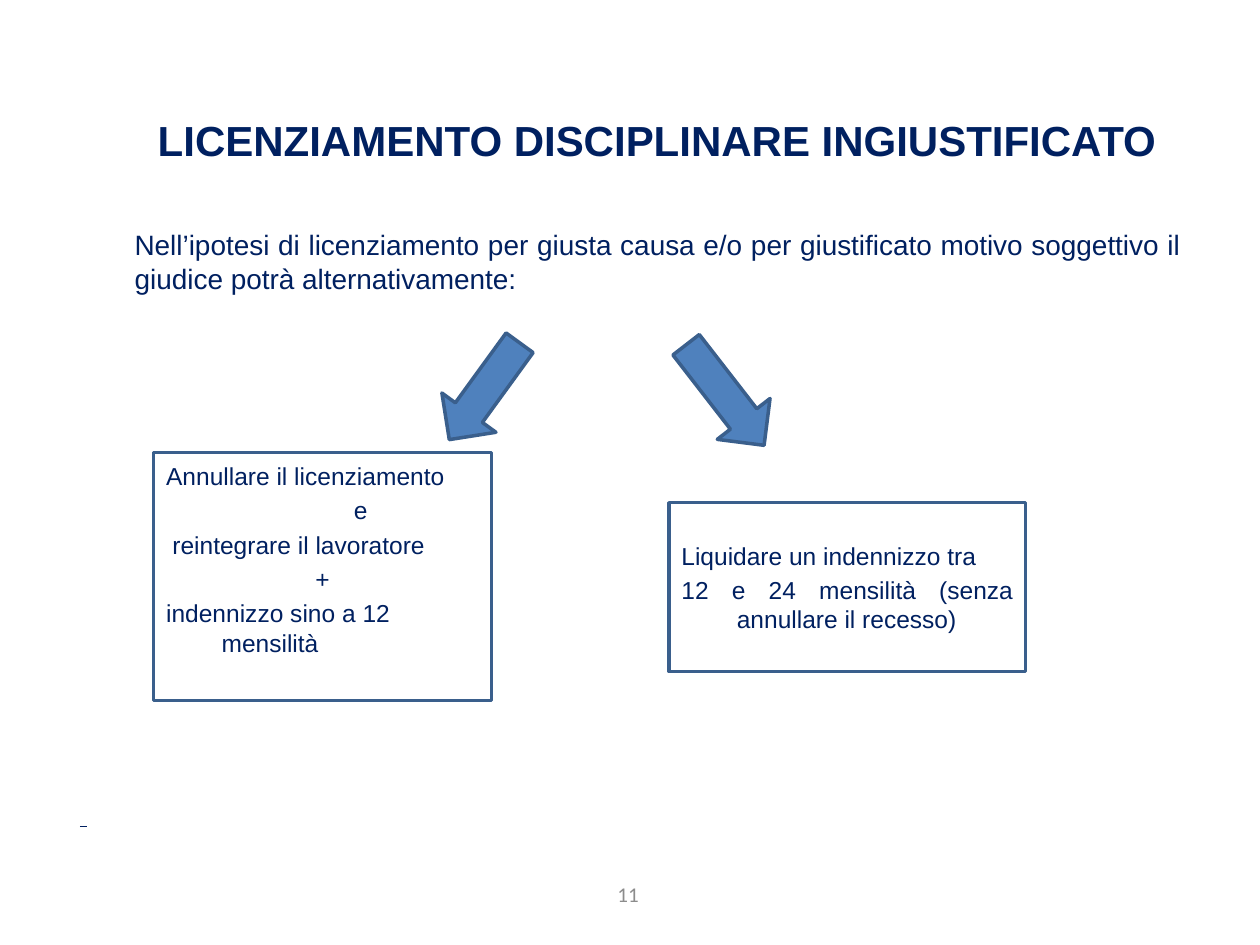
"""Build the slide on unjustified disciplinary dismissal and its two outcomes."""
from dataclasses import dataclass

import pptx
import pptx.dml.color
import pptx.enum.shapes
import pptx.enum.text
import pptx.util
from lxml import etree

COLORS = {"navy": "002060", "blue": "4F81BD", "edge": "3A5F8C", "white": "FFFFFF", "grey": "8C8C8C"}
COLUMNS, ROWS = 100, 75
HANGING = 0.44
SHAPES = pptx.enum.shapes.MSO_SHAPE
ALIGN = pptx.enum.text.PP_ALIGN
ANCHOR = pptx.enum.text.MSO_ANCHOR

deck = pptx.Presentation()
deck.slide_width = pptx.util.Inches(10)
deck.slide_height = pptx.util.Inches(7.5)


@dataclass
class Area:
    column: float
    row: float
    columns: float
    rows: float

    def lengths(self) -> list[int]:
        across, down = deck.slide_width / COLUMNS, deck.slide_height / ROWS
        return [round(self.column * across), round(self.row * down),
                round(self.columns * across), round(self.rows * down)]


@dataclass
class Line:
    text: str
    align: ALIGN = ALIGN.LEFT
    margin: float = 0
    indent: float = 0


@dataclass
class Style:
    size: float
    color: str = "navy"
    name: str = "Arial"
    bold: bool = False
    before: float = 0


@dataclass
class Arrow:
    area: Area
    rotation: float


@dataclass
class Outcome:
    area: Area
    lines: list[Line]
    anchor: ANCHOR
    margin_top: float


def rgb(name: str) -> pptx.dml.color.RGBColor:
    return pptx.dml.color.RGBColor.from_string(COLORS[name])


def write(frame, lines: list[Line], style: Style, **formats) -> None:
    for key, value in {"word_wrap": True, "vertical_anchor": ANCHOR.TOP, **formats}.items():
        setattr(frame, key, value)
    for number, line in enumerate(lines):
        para = frame.add_paragraph() if number else frame.paragraphs[0]
        para.alignment = line.align
        para.space_before = pptx.util.Pt(style.before)
        properties = para._p.get_or_add_pPr()
        properties.set("marL", str(pptx.util.Inches(line.margin)))
        properties.set("indent", str(pptx.util.Inches(line.indent)))
        span = para.add_run()
        span.text = line.text
        fonts = {"name": style.name, "size": pptx.util.Pt(style.size), "bold": style.bold}
        for key, value in fonts.items():
            setattr(span.font, key, value)
        span.font.color.rgb = rgb(style.color)


def add_block(page, kind: SHAPES, area: Area, fill: str):
    block = page.shapes.add_shape(kind, *area.lengths())
    block.shadow.inherit = False
    block.fill.solid()
    block.fill.fore_color.rgb = rgb(fill)
    block.line.color.rgb = rgb("edge")
    block.line.width = pptx.util.Pt(2)
    return block


def add_text(page, area: Area, line: Line, style: Style, anchor: ANCHOR = ANCHOR.TOP) -> None:
    box = page.shapes.add_textbox(*area.lengths())
    write(box.text_frame, [line], style, vertical_anchor=anchor)


def add_dash(page, column: float, row: float, columns: float) -> None:
    left, top, width, _ = Area(column, row, columns, 0).lengths()
    dash = page.shapes.add_connector(pptx.enum.shapes.MSO_CONNECTOR.STRAIGHT, left, top, left + width, top)
    dash.line.color.rgb = rgb("navy")
    dash.line.width = pptx.util.Pt(0.75)
    etree.SubElement(dash._element.spPr, pptx.oxml.ns.qn("a:effectLst"))


ARROWS = [Arrow(Area(35.8, 26.3, 5.3, 9.5), 36), Arrow(Area(54.9, 26.3, 5.3, 10.1), 322.2)]
OUTCOMES = [
    Outcome(Area(12.2, 35.9, 26.8, 19.7), [
        Line("Annullare il licenziamento"),
        Line("e", margin=1.49),
        Line("reintegrare il lavoratore", margin=0.05),
        Line("+", ALIGN.CENTER),
        Line("indennizzo sino a 12 mensilità", margin=HANGING, indent=-HANGING),
    ], ANCHOR.TOP, 0.07),
    Outcome(Area(53.1, 39.9, 28.3, 13.4), [
        Line("Liquidare un indennizzo tra", ALIGN.JUSTIFY),
        Line("12 e 24 mensilità (senza annullare il recesso)", ALIGN.JUSTIFY, HANGING, -HANGING),
    ], ANCHOR.MIDDLE, 0.05),
]


def main() -> None:
    page = deck.slides.add_slide(deck.slide_layouts[5])
    title = page.shapes.title
    title.left, title.top, title.width, title.height = Area(8.3, 8.2, 87.7, 5.8).lengths()
    write(title.text_frame, [Line("LICENZIAMENTO DISCIPLINARE INGIUSTIFICATO", ALIGN.CENTER)],
          Style(24, bold=True), vertical_anchor=ANCHOR.MIDDLE)
    add_text(page, Area(9.7, 17.6, 85, 6.5), Line(
        "Nell’ipotesi di licenziamento per giusta causa e/o per giustificato motivo "
        "soggettivo il giudice potrà alternativamente:", ALIGN.JUSTIFY), Style(16))
    for arrow in ARROWS:
        add_block(page, SHAPES.DOWN_ARROW, arrow.area, "blue").rotation = arrow.rotation
    for outcome in OUTCOMES:
        block = add_block(page, SHAPES.RECTANGLE, outcome.area, "white")
        write(block.text_frame, outcome.lines, Style(14, before=2.8),
              vertical_anchor=outcome.anchor, margin_top=pptx.util.Inches(outcome.margin_top))
    add_dash(page, 6.35, 65.6, 0.55)
    add_text(page, Area(38.2, 69, 23.3, 4), Line("11", ALIGN.CENTER),
             Style(12, "grey", "Calibri"), ANCHOR.MIDDLE)
    deck.save("out.pptx")


if __name__ == "__main__":
    main()
